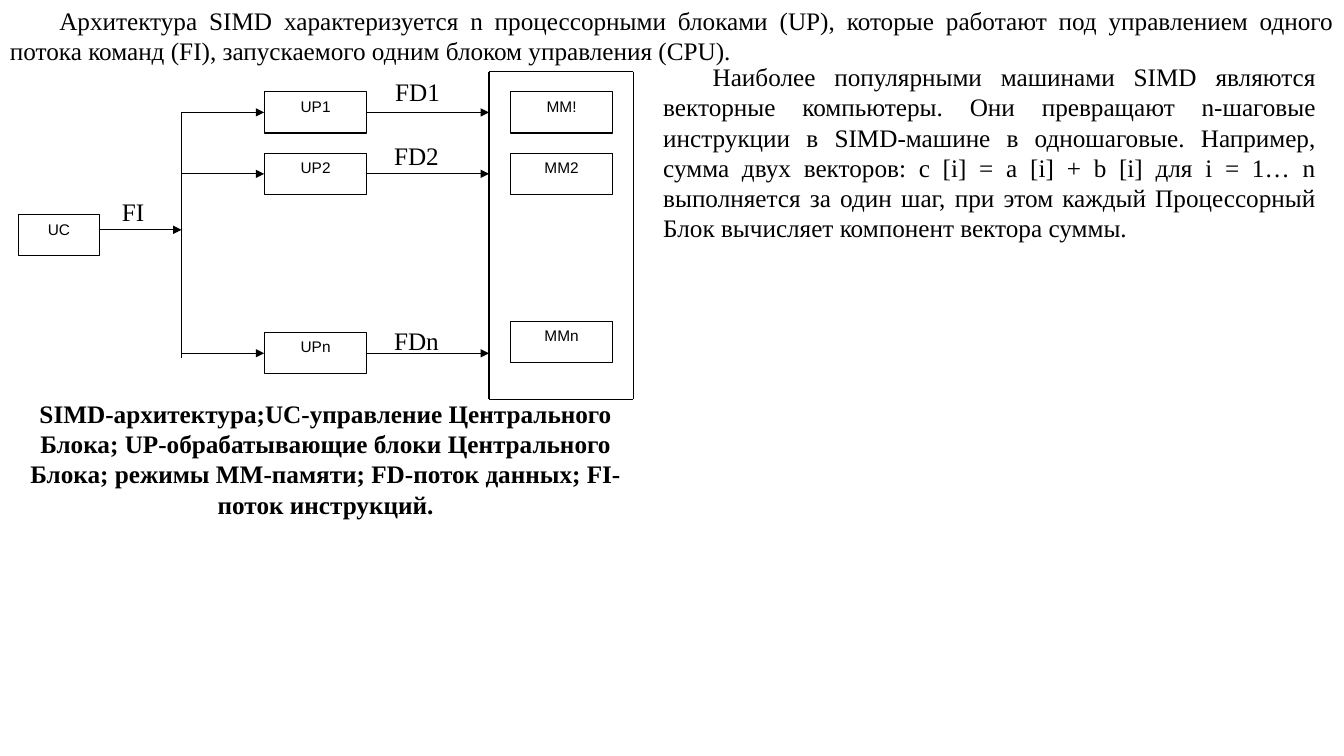
"""Build the SIMD architecture slide: processor diagram with explanatory text."""
from lxml.etree import SubElement
from pptx import Presentation
from pptx.dml.color import RGBColor
from pptx.enum.shapes import MSO_CONNECTOR, MSO_SHAPE
from pptx.enum.text import MSO_ANCHOR, MSO_AUTO_SIZE, PP_ALIGN
from pptx.oxml.ns import qn
from pptx.util import Inches, Pt

INTRO = ("Архитектура SIMD характеризуется n процессорными блоками (UP), которые работают "
         "под управлением одного потока команд (FI), запускаемого одним блоком управления (CPU).")
CAPTION = ("SIMD-архитектура;UC-управление Центрального Блока; UP-обрабатывающие блоки "
           "Центрального Блока; режимы ММ-памяти; FD-поток данных; FI-поток инструкций.")
EXPLANATION = ("Наиболее популярными машинами SIMD являются векторные компьютеры. Они превращают "
               "n-шаговые инструкции в SIMD-машине в одношаговые. Например, сумма двух векторов: "
               "c [i] = a [i] + b [i] для i = 1… n выполняется за один шаг, при этом каждый "
               "Процессорный Блок вычисляет компонент вектора суммы.")
# processor, memory, data flow, processor top, memory top, flow label left, flow label top
ROWS = [
    ("UP1", "MM!", "FD1", 0.91, 0.91, 3.82, 0.71),
    ("UP2", "MM2", "FD2", 1.52, 1.52, 3.81, 1.34),
    ("UPn", "MMn", "FDn", 3.3, 3.19, 3.81, 3.18),
]
COLORS = {"ink": "000000", "paper": "FFFFFF"}
SLIDE_WIDTH, SLIDE_HEIGHT = 13.33, 7.5
BOX_WIDTH, BOX_HEIGHT = 1.02, 0.41
CONTROL_LEFT, CONTROL_TOP, CONTROL_WIDTH = 0.18, 2.13, 0.81
BUS_X, BUS_BOTTOM, FLOW_Y = 1.8, 3.55, 2.28
PROCESSOR_LEFT, MEMORY_LEFT = 2.62, 5.06
FRAME_LEFT, FRAME_TOP, FRAME_RIGHT, FRAME_BOTTOM = 4.85, 0.71, 6.28, 3.96
LINE_WIDTH = Pt(0.75)
FIRST_LINE_INDENT = Inches(0.49)


def color(name):
    return RGBColor.from_string(COLORS[name])


def write(shape, text, size, font, align, bold=False, indent=False):
    shape.text_frame.text = text
    paragraph = shape.text_frame.paragraphs[0]
    paragraph.alignment = align
    if indent:
        properties = paragraph._p.get_or_add_pPr()
        properties.set("marL", "0")
        properties.set("indent", str(FIRST_LINE_INDENT))
    run_font = paragraph.runs[0].font
    run_font.size, run_font.name, run_font.bold = Pt(size), font, bold
    run_font.color.rgb = color("ink")


def add_text(slide, text, left, top, width, height, align=PP_ALIGN.LEFT, wrap=True, **style):
    shape = slide.shapes.add_textbox(*map(Inches, (left, top, width, height)))
    shape.text_frame.word_wrap = wrap
    shape.text_frame.auto_size = MSO_AUTO_SIZE.SHAPE_TO_FIT_TEXT
    write(shape, text, 18, "Times New Roman", align, **style)


def add_box(slide, text, left, top, width=BOX_WIDTH):
    box = slide.shapes.add_shape(MSO_SHAPE.RECTANGLE, *map(Inches, (left, top, width, BOX_HEIGHT)))
    box.shadow.inherit = False
    box.fill.solid()
    box.fill.fore_color.rgb = color("paper")
    box.line.color.rgb = color("ink")
    box.line.width = LINE_WIDTH
    box.text_frame.vertical_anchor = MSO_ANCHOR.TOP
    write(box, text, 11, "Arial", PP_ALIGN.CENTER)
    return box


def add_line(slide, start, end, arrow=False):
    connector = slide.shapes.add_connector(MSO_CONNECTOR.STRAIGHT, *map(Inches, start + end))
    connector.line.color.rgb = color("ink")
    connector.line.width = LINE_WIDTH
    if arrow:
        SubElement(connector.line._get_or_add_ln(), qn("a:tailEnd"), type="triangle")
    SubElement(connector._element.spPr, qn("a:effectLst"))
    return connector


def add_diagram(slide):
    add_box(slide, "UC", CONTROL_LEFT, CONTROL_TOP, CONTROL_WIDTH)
    add_line(slide, (CONTROL_LEFT + CONTROL_WIDTH, FLOW_Y), (BUS_X, FLOW_Y), arrow=True)
    add_line(slide, (BUS_X, BUS_BOTTOM), (BUS_X, ROWS[0][3] + BOX_HEIGHT / 2))

    corners = [(FRAME_LEFT, FRAME_TOP), (FRAME_RIGHT, FRAME_TOP),
               (FRAME_RIGHT, FRAME_BOTTOM), (FRAME_LEFT, FRAME_BOTTOM)]
    for start, end in zip(corners, corners[1:] + corners[:1]):
        add_line(slide, start, end)

    for processor, memory, flow, processor_top, memory_top, label_left, label_top in ROWS:
        box = add_box(slide, processor, PROCESSOR_LEFT, processor_top)
        add_box(slide, memory, MEMORY_LEFT, memory_top)
        middle = processor_top + BOX_HEIGHT / 2
        incoming = add_line(slide, (BUS_X, middle), (PROCESSOR_LEFT, middle), arrow=True)
        incoming.end_connect(box, 1)
        outgoing = add_line(slide, (PROCESSOR_LEFT + BOX_WIDTH, middle),
                            (FRAME_LEFT, middle), arrow=True)
        outgoing.begin_connect(box, 3)
        add_text(slide, flow, label_left, label_top, 0.65, 0.4, wrap=False)

    add_text(slide, "FI", 0.62, 1.9, 0.92, 0.4, PP_ALIGN.JUSTIFY, wrap=False, indent=True)


def main():
    presentation = Presentation()
    presentation.slide_width = Inches(SLIDE_WIDTH)
    presentation.slide_height = Inches(SLIDE_HEIGHT)
    slide = presentation.slides.add_slide(presentation.slide_layouts[6])
    slide.background.fill.solid()
    slide.background.fill.fore_color.rgb = color("paper")
    add_text(slide, INTRO, 0, 0, SLIDE_WIDTH, 0.71, PP_ALIGN.JUSTIFY, indent=True)
    add_diagram(slide)
    add_text(slide, CAPTION, CONTROL_LEFT, 3.9, FRAME_RIGHT - CONTROL_LEFT, 1.31,
             PP_ALIGN.CENTER, bold=True)
    add_text(slide, EXPLANATION, 6.48, 0.56, 6.67, 1.92, PP_ALIGN.JUSTIFY, indent=True)
    presentation.save("out.pptx")


if __name__ == "__main__":
    main()
